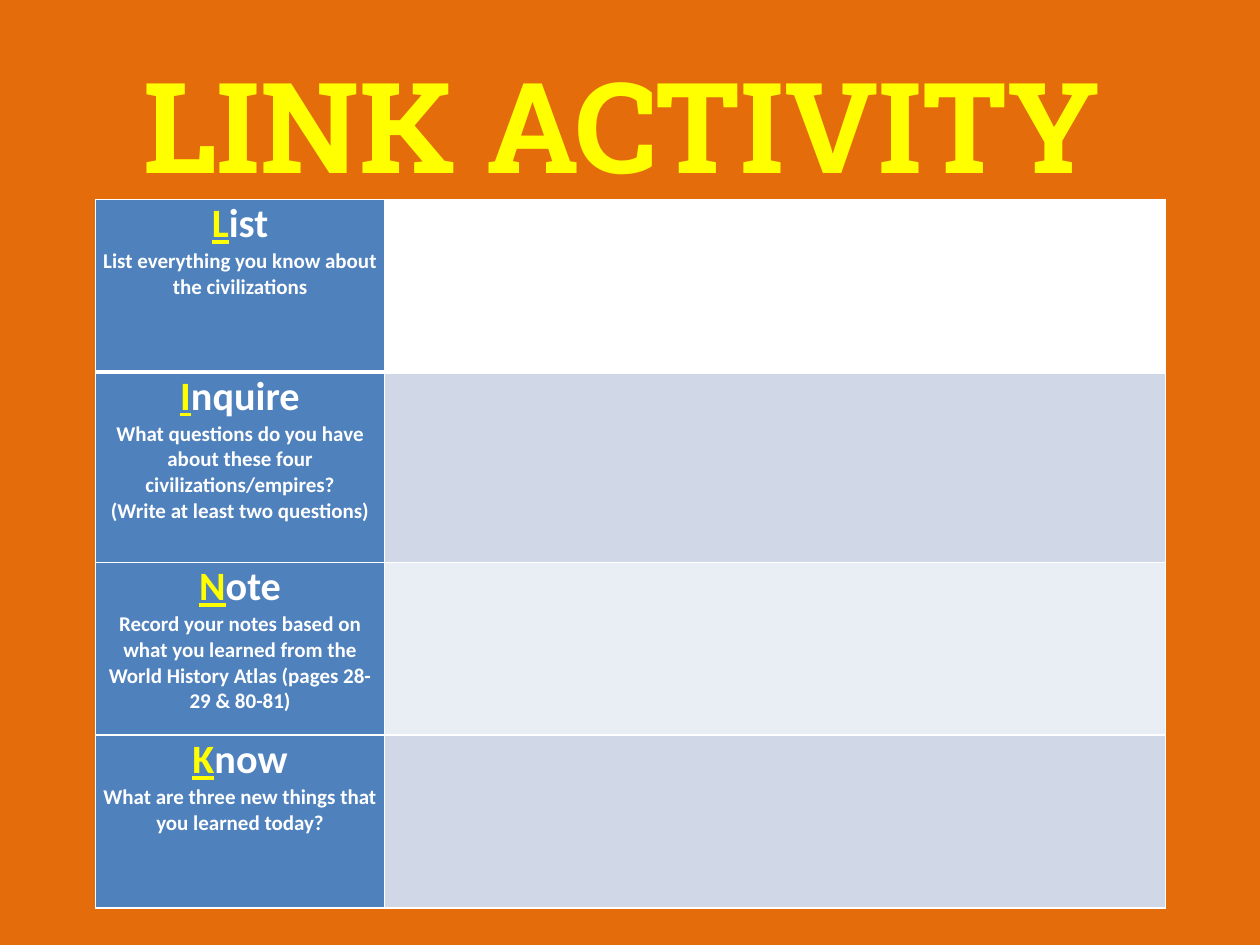
from dataclasses import dataclass

from lxml import etree
from pptx import Presentation
from pptx.dml.color import RGBColor
from pptx.enum.text import MSO_ANCHOR, MSO_AUTO_SIZE, PP_ALIGN
from pptx.oxml.ns import qn
from pptx.util import Cm, Pt

CENTER = PP_ALIGN.CENTER
MIDDLE = MSO_ANCHOR.MIDDLE
NO_FIT = MSO_AUTO_SIZE.NONE
TITLE_ONLY = 5


@dataclass(frozen=True)
class Theme:
    back: str = "E46C0A"
    accent: str = "FFFF00"
    label: str = "4F81BD"
    white: str = "FFFFFF"
    band: str = "D0D8E8"
    pale: str = "E9EDF4"
    title_font: str = "Roboto Slab"
    font: str = "Calibri"
    title_size: int = 72
    head_size: int = 23
    body_size: int = 12
    thin: int = 1
    thick: int = 3


STEPS = [
    ("List", ["List everything you know about the civilizations"]),
    ("Inquire", ["What questions do you have about these four civilizations/empires?",
                 "(Write at least two questions)"]),
    ("Note", ["Record your notes based on what you learned from the "
              "World History Atlas (pages 28-29 & 80-81)"]),
    ("Know", ["What are three new things that you learned today?"]),
]
WIDTHS = [5.82, 15.75]
HEIGHTS = [3.48, 3.84, 3.48, 3.48]


class Deck:
    def __init__(self, theme):
        self.theme = theme
        self.prs = Presentation()
        self.prs.slide_width, self.prs.slide_height = Cm(25.4), Cm(19.05)
        self.slide = self.prs.slides.add_slide(self.prs.slide_layouts[TITLE_ONLY])
        self.paint(self.slide.background.fill, theme.back)

    def paint(self, fill, color):
        fill.solid()
        fill.fore_color.rgb = RGBColor.from_string(color)

    def style(self, run, size, color, font):
        run.font.name = font
        run.font.size = Pt(size)
        run.font.bold = True
        run.font.color.rgb = RGBColor.from_string(color)

    def title(self, text, left, top, width, height):
        shape = self.slide.shapes.title
        shape.left, shape.top = Cm(left), Cm(top)
        shape.width, shape.height = Cm(width), Cm(height)
        frame = shape.text_frame
        frame.text = text
        frame.word_wrap = False
        frame.auto_size = NO_FIT
        frame.vertical_anchor = MIDDLE
        para = frame.paragraphs[0]
        para.alignment = CENTER
        t = self.theme
        self.style(para.runs[0], t.title_size, t.accent, t.title_font)

    def border(self, cell, top, bottom):
        """Draw white cell edges; top and bottom are widths in points."""
        props = cell._tc.get_or_add_tcPr()
        thin = self.theme.thin
        for side, width in zip("LRTB", (thin, thin, top, bottom)):
            line = etree.SubElement(props, qn(f"a:ln{side}"), w=str(Pt(width)))
            fill = etree.SubElement(line, qn("a:solidFill"))
            etree.SubElement(fill, qn("a:srgbClr"), val=self.theme.white)

    def label(self, cell, head, notes):
        """Write a heading with a marked first letter, then its notes."""
        t = self.theme
        cell.margin_left = cell.margin_right = Cm(0.15)
        cell.margin_top = cell.margin_bottom = 0
        frame = cell.text_frame
        para = frame.paragraphs[0]
        para.alignment = CENTER
        for text, color in ((head[0], t.accent), (head[1:], t.white)):
            run = para.add_run()
            run.text = text
            self.style(run, t.head_size, color, t.font)
        para.runs[0].font.underline = True
        for note in notes:
            para = frame.add_paragraph()
            para.text = note
            para.alignment = CENTER
            self.style(para.runs[0], t.body_size, t.white, t.font)

    def table(self, steps, left, top, widths, heights):
        t = self.theme
        grid = self.slide.shapes.add_table(
            len(steps), len(widths), Cm(left), Cm(top),
            Cm(sum(widths)), Cm(sum(heights))).table
        for col, width in zip(grid.columns, widths):
            col.width = Cm(width)
        fills = [t.white, t.band, t.pale, t.band]
        for i, (head, notes) in enumerate(steps):
            grid.rows[i].height = Cm(heights[i])
            for cell, color in zip(grid.rows[i].cells, (t.label, fills[i])):
                self.border(cell, t.thick if i == 1 else t.thin,
                            t.thick if i == 0 else t.thin)
                self.paint(cell.fill, color)
            self.label(grid.cell(i, 0), head, notes)


def main():
    deck = Deck(Theme())
    deck.title("LINK ACTIVITY", 2.08, 0.81, 20.93, 3.33)
    deck.table(STEPS, 1.93, 4.02, WIDTHS, HEIGHTS)
    deck.prs.save("out.pptx")


if __name__ == "__main__":
    main()
